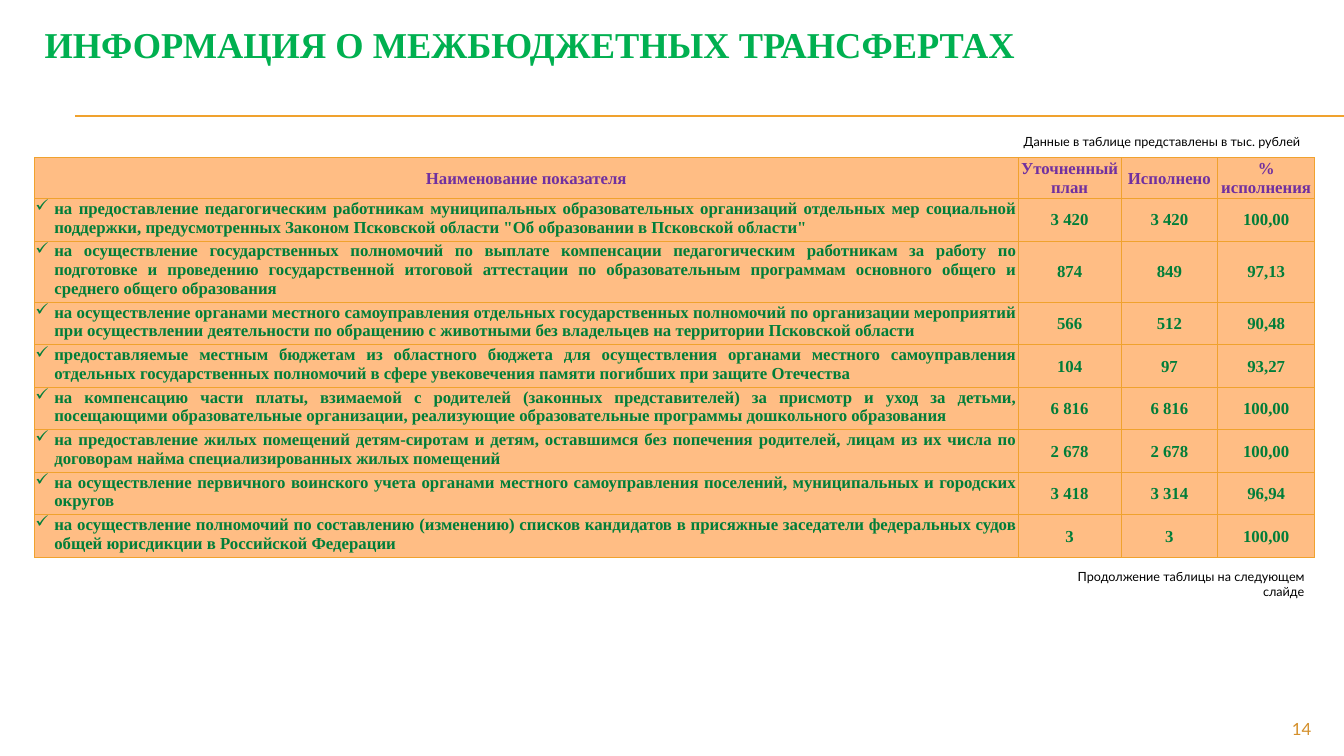
import pptx
import pptx.dml.color
import pptx.enum.shapes
import pptx.enum.text
import pptx.oxml
import pptx.oxml.ns
import pptx.util

Cm = pptx.util.Cm
Pt = pptx.util.Pt
ALIGN = pptx.enum.text.PP_ALIGN
ANCHOR = pptx.enum.text.MSO_ANCHOR

SERIF = {"name": "Times New Roman", "bold": True}
TITLE = {**SERIF, "size": Pt(26)}
CELL = {**SERIF, "size": Pt(12)}
NOTE = {"name": "Lato", "size": Pt(9)}
NUMBER = {"name": "Lato", "size": Pt(12)}

MARGINS = {"margin_left": Cm(0.02), "margin_top": Cm(0.02), "margin_right": Cm(0.02), "margin_bottom": Cm(0)}
COLUMN_WIDTHS = [24.79, 2.59, 2.44, 2.44]
ROW_HEIGHTS = [0.97, 1.07, 1.42] + [1.07] * 6
HEADER = ("Наименование показателя", "Уточненный план", "Исполнено", "% исполнения")
TRANSFERS = [
    ("на предоставление педагогическим работникам муниципальных образовательных организаций отдельных мер "
     "социальной поддержки, предусмотренных Законом Псковской области \"Об образовании в Псковской области\"",
     "3 420", "3 420", "100,00"),
    ("на осуществление государственных полномочий по выплате компенсации педагогическим работникам за работу "
     "по подготовке и проведению государственной итоговой аттестации по образовательным программам основного "
     "общего и среднего общего образования",
     "874", "849", "97,13"),
    ("на осуществление органами местного самоуправления отдельных государственных полномочий по организации "
     "мероприятий при осуществлении деятельности по обращению с животными без владельцев на территории "
     "Псковской области",
     "566", "512", "90,48"),
    ("предоставляемые местным бюджетам из областного бюджета для осуществления органами местного самоуправления "
     "отдельных государственных полномочий в сфере увековечения памяти погибших при защите Отечества",
     "104", "97", "93,27"),
    ("на компенсацию части платы, взимаемой с родителей (законных представителей) за присмотр и уход за детьми, "
     "посещающими образовательные организации, реализующие образовательные программы дошкольного образования",
     "6 816", "6 816", "100,00"),
    ("на предоставление жилых помещений детям-сиротам и детям, оставшимся без попечения родителей, лицам из их "
     "числа по договорам найма специализированных жилых помещений",
     "2 678", "2 678", "100,00"),
    ("на осуществление первичного воинского учета органами местного самоуправления поселений, муниципальных "
     "и городских округов",
     "3 418", "3 314", "96,94"),
    ("на осуществление полномочий по составлению (изменению) списков кандидатов в присяжные заседатели "
     "федеральных судов общей юрисдикции в Российской Федерации",
     "3", "3", "100,00"),
]


def rgb(value):
    """Return the colour for a hex string."""
    return pptx.dml.color.RGBColor.from_string(value)


def apply(target, values):
    """Set every attribute of a format dict on the target."""
    for name, value in values.items():
        setattr(target, name, value)


def write(tf, text, font, color, align):
    """Write one formatted paragraph and return it."""
    p = tf.paragraphs[0]
    p.alignment = align
    r = p.add_run()
    r.text = text
    apply(r.font, font)
    r.font.color.rgb = rgb(color)
    return p


def add_xml(parent, xml):
    """Append a DrawingML fragment to the parent element."""
    parent.append(pptx.oxml.parse_xml(xml.replace(">", f" {pptx.oxml.ns.nsdecls('a')}>", 1)))


def add_title(s, text, left, top, width, height):
    """Place the title placeholder in the given box."""
    sp = s.shapes.title
    apply(sp, {"left": Cm(left), "top": Cm(top), "width": Cm(width), "height": Cm(height)})
    apply(sp.text_frame, {"word_wrap": True, "vertical_anchor": ANCHOR.MIDDLE,
                          "auto_size": pptx.enum.text.MSO_AUTO_SIZE.NONE})
    write(sp.text_frame, text, TITLE, "00B050", ALIGN.LEFT)


def add_rules(s, left, top, right):
    """Draw the double rule under the title."""
    for y in (top, top + 0.02):
        sp = s.shapes.add_connector(pptx.enum.shapes.MSO_CONNECTOR.STRAIGHT, Cm(left), Cm(y), Cm(right), Cm(y))
        sp.line.color.rgb = rgb("F0A22E")
        sp.line.width = Pt(0.75)
        add_xml(sp._element.spPr, "<a:effectLst></a:effectLst>")


def add_text(s, text, box, font, color, align, wrap=True):
    """Add a one-paragraph text box."""
    tf = s.shapes.add_textbox(*map(Cm, box)).text_frame
    tf.word_wrap = wrap
    write(tf, text, font, color, align)


def fill_cell(cell, text, color, listed):
    """Format one table cell, with a check mark if it is listed."""
    apply(cell, {**MARGINS, "vertical_anchor": ANCHOR.TOP if listed else ANCHOR.MIDDLE})
    p = write(cell.text_frame, text, CELL, color, ALIGN.JUSTIFY if listed else ALIGN.CENTER)
    if listed:
        pPr = p._p.get_or_add_pPr()
        pPr.set("marL", str(Cm(0.48)))
        pPr.set("indent", str(-Cm(0.48)))
        add_xml(pPr, '<a:buChar char="✓"></a:buChar>')
    for side in "LRTB":
        add_xml(cell._tc.get_or_add_tcPr(),
                f'<a:ln{side} w="{Pt(0.79)}"><a:solidFill><a:srgbClr val="F0A22E"/></a:solidFill></a:ln{side}>')
    cell.fill.solid()
    cell.fill.fore_color.rgb = rgb("FFBD84")


def add_transfers(s, left, top):
    """Add the table of transfers at the given corner."""
    rows = [HEADER] + TRANSFERS
    table = s.shapes.add_table(len(rows), len(HEADER), Cm(left), Cm(top),
                               Cm(sum(COLUMN_WIDTHS)), Cm(sum(ROW_HEIGHTS))).table
    apply(table, {"first_row": False, "horz_banding": False})
    for column, width in zip(table.columns, COLUMN_WIDTHS):
        column.width = Cm(width)
    for row, height in zip(table.rows, ROW_HEIGHTS):
        row.height = Cm(height)
    for i, texts in enumerate(rows):
        for j, text in enumerate(texts):
            fill_cell(table.cell(i, j), text, "007E39" if i else "7030A0", i > 0 and j == 0)


def main():
    """Build and save the slide."""
    prs = pptx.Presentation()
    apply(prs, {"slide_width": Cm(33.87), "slide_height": Cm(19.05)})
    s = prs.slides.add_slide(prs.slide_layouts[5])
    add_rules(s, 1.9, 2.92, 33.87)
    add_title(s, "ИНФОРМАЦИЯ О МЕЖБЮДЖЕТНЫХ ТРАНСФЕРТАХ", 0.87, 0.64, 32.26, 0.94)
    add_text(s, "Данные в таблице представлены в тыс. рублей", (25.55, 3.25, 7.57, 0.64),
             NOTE, "000000", ALIGN.LEFT, wrap=False)
    add_transfers(s, 0.87, 3.97)
    add_text(s, "Продолжение таблицы на следующем слайде", (26.34, 14.2, 6.78, 0.64),
             NOTE, "000000", ALIGN.RIGHT)
    add_text(s, "14", (30.48, 17.98, 2.82, 0.69), NUMBER, "D48F29", ALIGN.RIGHT)
    prs.save("out.pptx")


if __name__ == "__main__":
    main()
